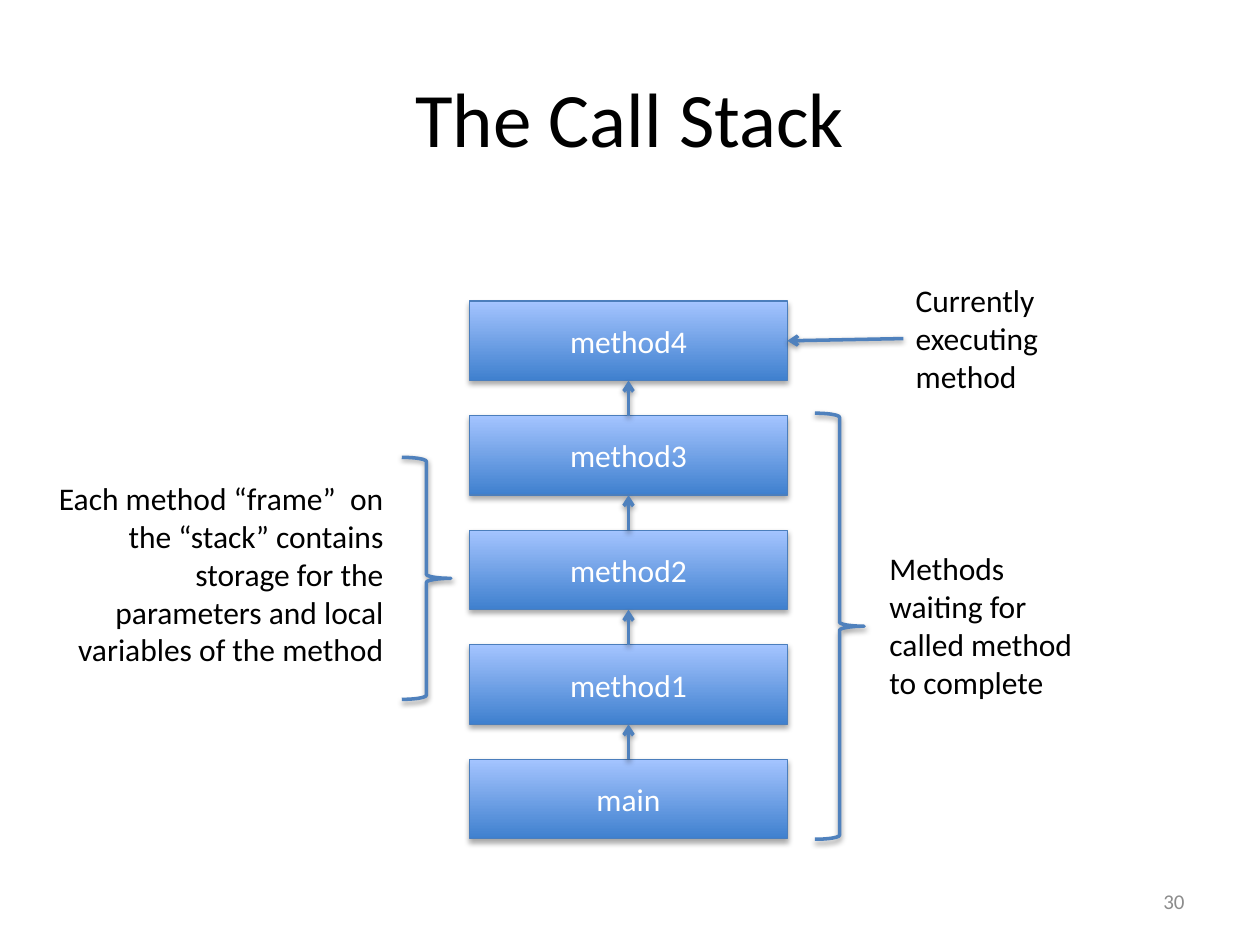
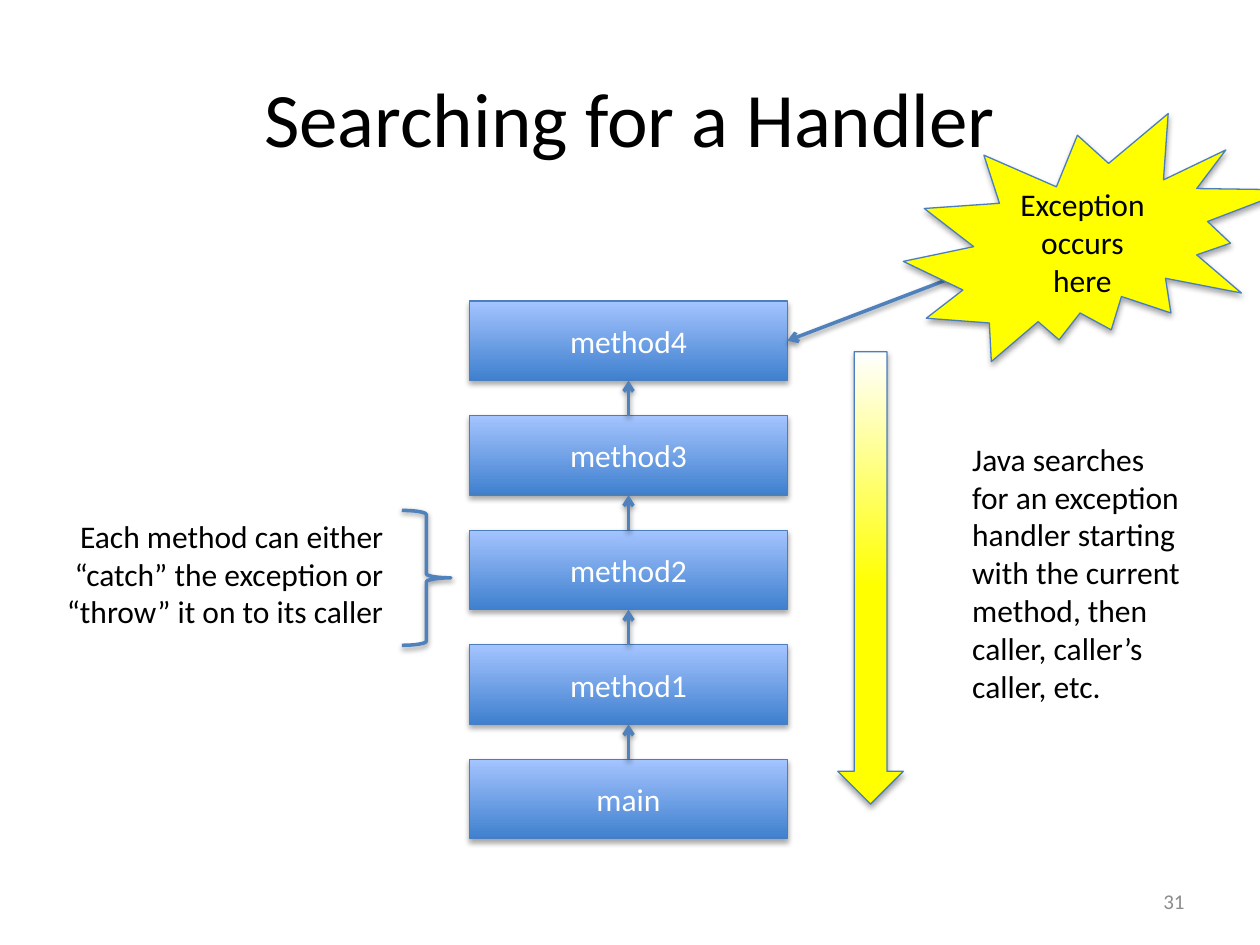
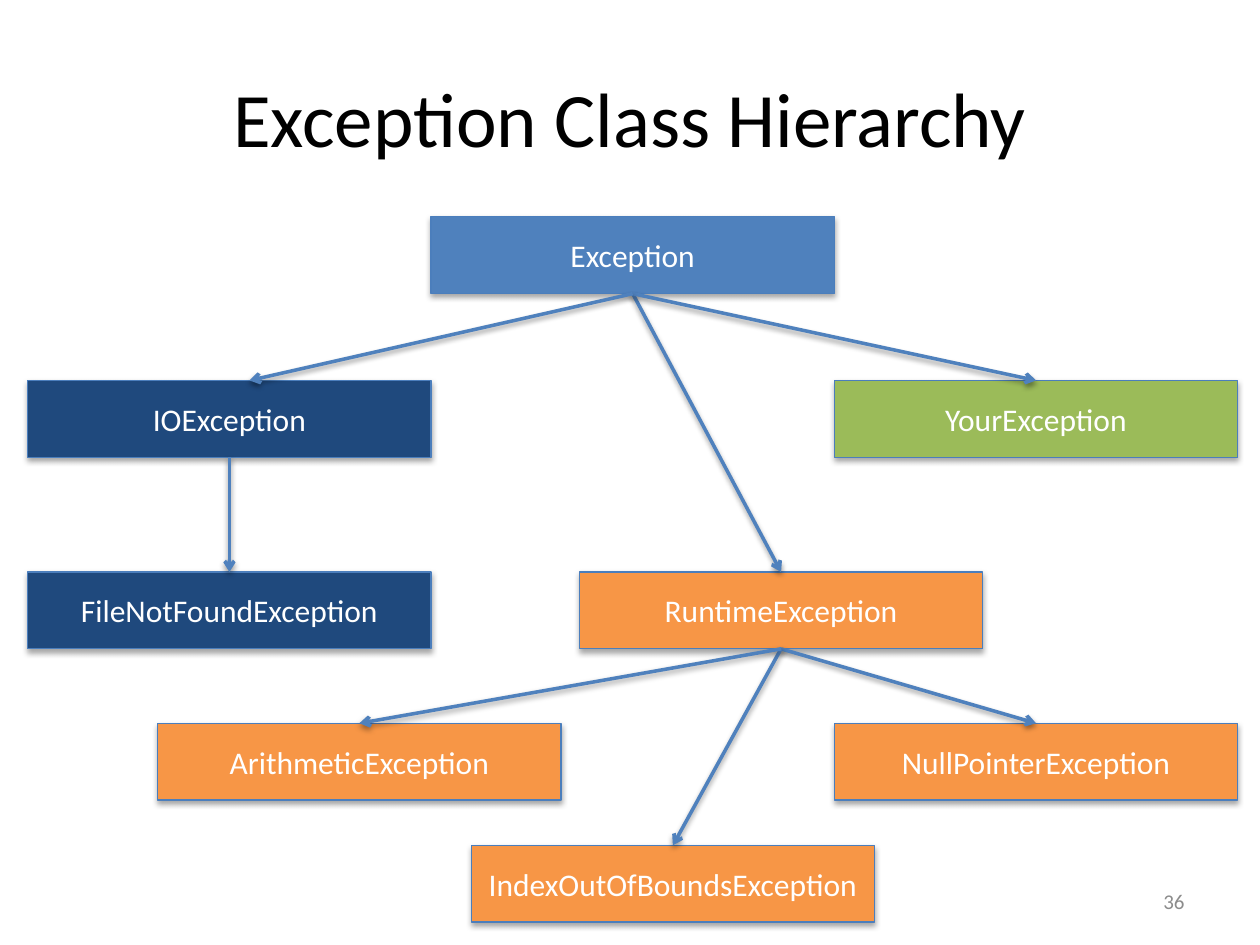
from typing import NamedTuple

from lxml.etree import SubElement
from pptx import Presentation
from pptx.dml.color import RGBColor
from pptx.enum.shapes import MSO_CONNECTOR, MSO_SHAPE
from pptx.enum.text import MSO_ANCHOR, MSO_AUTO_SIZE, PP_ALIGN
from pptx.oxml.ns import qn
from pptx.util import Cm, Pt

COLOURS = {
    "text": "000000", "label": "FFFFFF", "number": "8C8C8C",
    "outline": "4B7EBC", "accent": "4F81BD",
    "frame_dark": "3F80CE", "frame_light": "A4C4FF",
    "io": "1F497D", "runtime": "F79646", "custom": "9BBB59",
    "alert": "FFFF00", "fade": "FFFFFF",
}
FONT = "Calibri"
TOP, LEFT, BOTTOM, RIGHT = range(4)
FRAME_GRADIENT = ((0, "frame_dark"), (1, "frame_light"))
SEARCH_GRADIENT = ((0.48, "alert"), (1, "fade"))
METHODS = ("main", "method1", "method2", "method3", "method4")


class Box(NamedTuple):
    """A region in centimetres."""
    left: float
    top: float
    width: float
    height: float

    def lengths(self):
        """Return the region as slide lengths."""
        return [Cm(value) for value in self]


STACK = Box(9.47, 6.07, 6.4, 10.84)


def colour(key):
    """Return a palette colour."""
    return RGBColor.from_string(COLOURS[key])


def write(body, text, size=18, ink="text", align=PP_ALIGN.LEFT,
          anchor=MSO_ANCHOR.TOP):
    """Fill a text body with one formatted paragraph."""
    body.word_wrap = True
    body.vertical_anchor = anchor
    paragraph = body.paragraphs[0]
    paragraph.text = text
    paragraph.alignment = align
    paragraph.font.name = FONT
    paragraph.font.size = Pt(size)
    paragraph.font.color.rgb = colour(ink)


def cast_shadow(part, alpha, distance):
    """Give a shape or connector a soft shadow below it."""
    effects = SubElement(part._element.spPr, qn("a:effectLst"))
    shadow = SubElement(effects, qn("a:outerShdw"), blurRad="40000",
                        dist=str(distance), dir="5400000", rotWithShape="0")
    tint = SubElement(shadow, qn("a:srgbClr"), val="000000")
    SubElement(tint, qn("a:alpha"), val=str(alpha * 1000))


def add_block(slide, kind, box, fill, text="", ink="label"):
    """Draw an outlined shape with a plain or gradient fill."""
    block = slide.shapes.add_shape(kind, *box.lengths())
    if isinstance(fill, str):
        block.fill.solid()
        block.fill.fore_color.rgb = colour(fill)
    else:
        block.fill.gradient()
        block.fill.gradient_angle = 90
        for stop, (position, key) in zip(block.fill.gradient_stops, fill):
            stop.position = position
            stop.color.rgb = colour(key)
    block.line.color.rgb = colour("outline")
    block.line.width = Pt(0.75)
    cast_shadow(block, 35, 23000)
    if text:
        write(block.text_frame, text, ink=ink, align=PP_ALIGN.CENTER,
              anchor=MSO_ANCHOR.MIDDLE)
    return block


def add_brace(slide, box):
    """Draw a right brace."""
    brace = slide.shapes.add_shape(MSO_SHAPE.RIGHT_BRACE, *box.lengths())
    brace.fill.background()
    brace.line.color.rgb = colour("accent")
    brace.line.width = Pt(2)
    cast_shadow(brace, 38, 20000)


def add_arrow(slide, start=(0, 0), end=(0, 0), source=None, target=None):
    """Draw an arrow between points or joined (shape, side) pairs."""
    arrow = slide.shapes.add_connector(
        MSO_CONNECTOR.STRAIGHT, *[Cm(value) for value in (*start, *end)])
    if source:
        arrow.begin_connect(*source)
    if target:
        arrow.end_connect(*target)
    arrow.line.color.rgb = colour("accent")
    arrow.line.width = Pt(2)
    SubElement(arrow._element.spPr.find(qn("a:ln")), qn("a:tailEnd"), type="arrow")
    cast_shadow(arrow, 38, 20000)


def add_note(slide, box, text, align=PP_ALIGN.LEFT):
    """Write a note that grows with its text."""
    note = slide.shapes.add_textbox(*box.lengths())
    write(note.text_frame, text, align=align)
    note.text_frame.auto_size = MSO_AUTO_SIZE.SHAPE_TO_FIT_TEXT
    return note


def add_titled_slide(deck, title, number):
    """Add a slide with its title and number."""
    slide = deck.slides.add_slide(deck.slide_layouts[5])
    heading = slide.shapes.title
    heading.left, heading.top, heading.width, heading.height = Box(
        1.27, 0.76, 22.86, 3.18).lengths()
    write(heading.text_frame, title, size=44, align=PP_ALIGN.CENTER,
          anchor=MSO_ANCHOR.MIDDLE)
    footer = slide.shapes.add_textbox(*Box(18.2, 17.65, 5.93, 1.02).lengths())
    write(footer.text_frame, str(number), size=12, ink="number",
          align=PP_ALIGN.RIGHT, anchor=MSO_ANCHOR.MIDDLE)
    return slide


def draw_stack(slide, box):
    """Stack the method frames from the bottom up and return the top one."""
    height = 1.6
    pitch = (box.height - height) / (len(METHODS) - 1)
    bottom = box.top + box.height - height
    frames = [
        add_block(slide, MSO_SHAPE.RECTANGLE,
                  Box(box.left, bottom - level * pitch, box.width, height),
                  FRAME_GRADIENT, method)
        for level, method in enumerate(METHODS)
    ]
    for caller, called in zip(frames, frames[1:]):
        add_arrow(slide, source=(caller, TOP), target=(called, BOTTOM))
    return frames[-1]


def draw_frame_remark(slide, box, note_height, text):
    """Set a right-aligned note before a brace that fills the box height."""
    brace_width, lift = 0.99, 0.07
    add_brace(slide, Box(box.left + box.width - brace_width, box.top,
                         brace_width, box.height))
    note_top = box.top + (box.height - note_height) / 2 - lift
    add_note(slide, Box(box.left, note_top, 7.37, note_height), text,
             PP_ALIGN.RIGHT)


def draw_method_states(slide, box, current_frame):
    """Tell the executing method from the waiting ones."""
    current = add_note(slide, Box(box.left + 1.78, box.top, 3.86, 2.57),
                       "Currently executing method")
    add_arrow(slide, source=(current, LEFT), target=(current_frame, RIGHT))
    add_note(slide, Box(box.left + 1.25, box.top + 5.41, 4.75, 3.33),
             "Methods waiting for called method to complete")
    add_brace(slide, Box(box.left, box.top + 2.79, 0.99, box.height - 2.79))


def draw_handler_search(slide, box, current_frame):
    """Show where the exception occurs and how the search goes down."""
    add_arrow(slide, start=(box.left + 2.46, box.top + 3.25),
              target=(current_frame, RIGHT))
    add_note(slide, Box(box.left + 2.46, box.top + 6.45, 4.75, 5.64),
             "Java searches for an exception handler starting with the current "
             "method, then caller, caller’s caller, etc.")
    add_block(slide, MSO_SHAPE.DOWN_ARROW,
              Box(box.left, box.top + 4.8, 1.32, box.height - 4.8),
              SEARCH_GRADIENT)
    add_block(slide, MSO_SHAPE.EXPLOSION2,
              Box(box.left + 1.32, box.top, box.width - 1.32, 5), "alert",
              "Exception occurs here", "text")


def draw_hierarchy(slide, box):
    """Draw the exception classes and the arrows from parent to child."""
    width, height = box.width / 3, 1.55
    layout = {
        "Exception": (width, 0, "accent"),
        "IOException": (0, 3.3, "io"),
        "RuntimeException": (11.12, 7.16, "runtime"),
        "NullPointerException": (2 * width, 10.21, "runtime"),
        "IndexOutOfBoundsException": (8.94, box.height - height, "runtime"),
        "YourException": (2 * width, 3.3, "custom"),
        "FileNotFoundException": (0, 7.16, "io"),
        "ArithmeticException": (2.62, 10.21, "runtime"),
    }
    classes = {
        name: add_block(slide, MSO_SHAPE.RECTANGLE,
                        Box(box.left + x, box.top + y, width, height), fill, name)
        for name, (x, y, fill) in layout.items()
    }
    children = {
        "Exception": ("RuntimeException", "YourException"),
        "IOException": ("FileNotFoundException",),
        "RuntimeException": ("NullPointerException", "IndexOutOfBoundsException",
                             "ArithmeticException"),
    }
    for parent, names in children.items():
        for name in names:
            add_arrow(slide, source=(classes[parent], BOTTOM),
                      target=(classes[name], TOP))
    add_arrow(slide, end=(box.left + 4.47, box.top + 3.3),
              source=(classes["Exception"], BOTTOM))


def build_call_stack(deck):
    """Build the call stack slide."""
    slide = add_titled_slide(deck, "The Call Stack", 30)
    current_frame = draw_stack(slide, STACK)
    draw_frame_remark(slide, Box(0.61, 9.22, 8.48, 4.88), 4.11,
                      "Each method “frame”  on the “stack” contains storage for "
                      "the parameters and local variables of the method")
    draw_method_states(slide, Box(16.43, 5.54, 6, 11.38), current_frame)


def build_handler_search(deck):
    """Build the handler search slide."""
    slide = add_titled_slide(deck, "Searching for a Handler", 31)
    current_frame = draw_stack(slide, STACK)
    draw_frame_remark(slide, Box(0.61, 10.29, 8.48, 2.72), 2.57,
                      "Each method can either “catch” the exception or “throw” "
                      "it on to its caller")
    draw_handler_search(slide, Box(16.89, 2.29, 9.12, 13.92), current_frame)


def build_hierarchy(deck):
    """Build the class hierarchy slide."""
    slide = add_titled_slide(deck, "Exception Class Hierarchy", 36)
    draw_hierarchy(slide, Box(0.56, 4.37, 24.39, 14.22))


def main():
    """Build and save the deck."""
    deck = Presentation()
    deck.slide_width, deck.slide_height = Cm(25.4), Cm(19.05)
    build_call_stack(deck)
    build_handler_search(deck)
    build_hierarchy(deck)
    deck.save("out.pptx")


if __name__ == "__main__":
    main()
